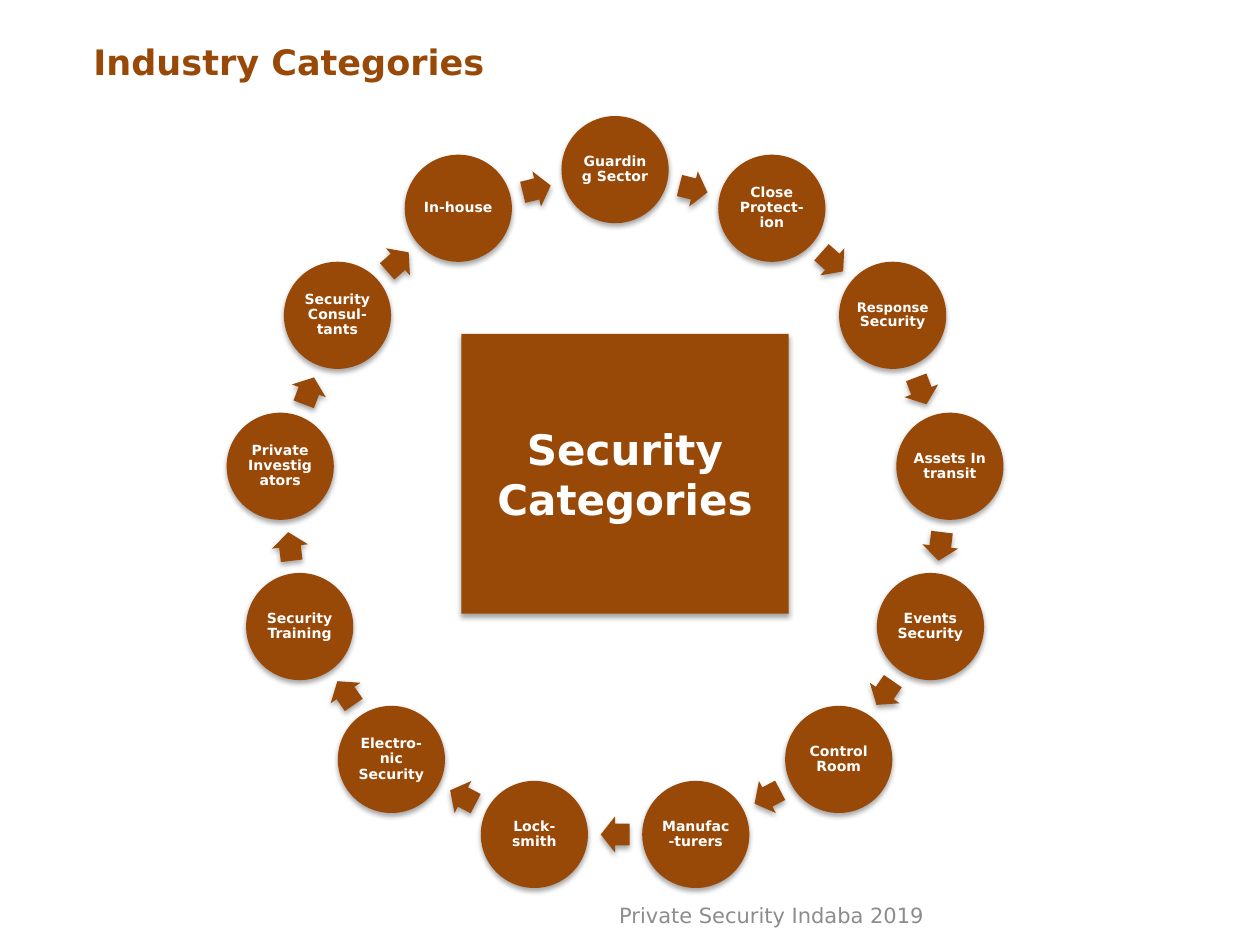
from dataclasses import dataclass
from math import cos, radians, sin

from lxml import etree
from pptx import Presentation
from pptx.dml.color import RGBColor
from pptx.enum import shapes, text
from pptx.oxml.ns import qn
from pptx.util import Cm, Pt

HUES = {"brown": "984807", "white": "FFFFFF", "grey": "8C8C8C", "black": "000000"}
FACE = "DejaVu Sans"
MID_X, MID_Y, RADIUS = 12.4, 10.22, 6.8
DISC = 2.16
ARROW_W, ARROW_H = 0.58, 0.73
MARGIN = 0.03
SIDES = ("margin_left", "margin_top", "margin_right", "margin_bottom")
KIND = shapes.MSO_SHAPE
ALIGN = text.PP_ALIGN
ANCHOR = text.MSO_ANCHOR


@dataclass
class Run:
    words: str
    size: float = 8


@dataclass
class Style:
    hue: str = "white"
    bold: bool = True
    align: ALIGN = ALIGN.CENTER
    anchor: ANCHOR = ANCHOR.MIDDLE
    space: float = 1.0


def shade(shape) -> None:
    shape.shadow.inherit = False
    effects = shape._element.spPr.find(qn("a:effectLst"))
    shadow = etree.SubElement(effects, qn("a:outerShdw"), {
        "blurRad": str(Pt(3.1)), "dist": str(Pt(1.8)),
        "dir": "5400000", "rotWithShape": "0"})
    color = etree.SubElement(shadow, qn("a:srgbClr"), val=HUES["black"])
    etree.SubElement(color, qn("a:alpha"), val="35000")


def block(parent, kind: KIND, x: float, y: float, w: float, h: float):
    shape = parent.add_shape(kind, Cm(x - w / 2), Cm(y - h / 2), Cm(w), Cm(h))
    shape.fill.solid()
    shape.fill.fore_color.rgb = RGBColor.from_string(HUES["brown"])
    shape.line.fill.background()
    shade(shape)
    return shape


def write(shape, lines: list[list[Run]], style: Style) -> None:
    frame = shape.text_frame
    form = {"word_wrap": True, "vertical_anchor": style.anchor}
    for name, value in form.items():
        setattr(frame, name, value)
    for pos, runs in enumerate(lines):
        para = frame.add_paragraph() if pos else frame.paragraphs[0]
        form = {"alignment": style.align, "line_spacing": style.space}
        for name, value in form.items():
            setattr(para, name, value)
        for item in runs:
            run = para.add_run()
            run.text = item.words
            form = {"name": FACE, "size": Pt(item.size), "bold": style.bold}
            for name, value in form.items():
                setattr(run.font, name, value)
            run.font.color.rgb = RGBColor.from_string(HUES[style.hue])


def point(angle: float, reach: float) -> tuple[float, float]:
    turn = radians(angle)
    return MID_X + reach * sin(turn), MID_Y - reach * cos(turn)


def ring(parent, items: list[list[Run]]) -> None:
    step = 360 / len(items)
    chord = RADIUS * cos(radians(step / 2))
    for pos, runs in enumerate(items):
        disc = block(parent, KIND.OVAL, *point(pos * step, RADIUS), DISC, DISC)
        for side in SIDES:
            setattr(disc.text_frame, side, Cm(MARGIN))
        write(disc, [runs], Style(space=0.9))
        angle = (pos + 0.5) * step
        arrow = block(parent, KIND.RIGHT_ARROW, *point(angle, chord), ARROW_W, ARROW_H)
        arrow.adjustments[0], arrow.adjustments[1] = 0.6, 0.5
        arrow.rotation = angle


def main() -> None:
    deck = Presentation()
    deck.slide_width, deck.slide_height = Cm(25.4), Cm(19.05)
    slide = deck.slides.add_slide(deck.slide_layouts[5])

    title = slide.shapes.title
    form = {"left": Cm(1.63), "top": Cm(0.69), "width": Cm(22.76), "height": Cm(1.12)}
    for name, value in form.items():
        setattr(title, name, value)
    write(title, [[Run("Industry Categories", 20)]],
          Style("brown", align=ALIGN.LEFT, anchor=ANCHOR.TOP))

    foot = slide.shapes.add_textbox(Cm(11.53), Cm(17.93), Cm(8.05), Cm(1.02))
    write(foot, [[Run("Private Security Indaba 2019", 12)]], Style("grey", bold=False))

    names = ["Guarding Sector", "Close Protect-ion", "Response Security",
             "Assets In transit", "Events Security", "Control Room",
             "Manufac-turers", "Lock-smith", "Electro-nic Security",
             "Security Training", "Private Investigators",
             "Security Consul-tants", "In-house"]
    items = [[Run(name)] for name in names]
    items[2] = [Run("Response ", 7.5), Run("Security")]
    ring(slide.shapes.add_group_shape().shapes, items)

    core = block(slide.shapes, KIND.RECTANGLE, 12.6, 9.55, 6.6, 5.64)
    write(core, [[Run("Security", 24)], [Run("Categories", 24)]], Style())
    deck.save("out.pptx")


if __name__ == "__main__":
    main()
